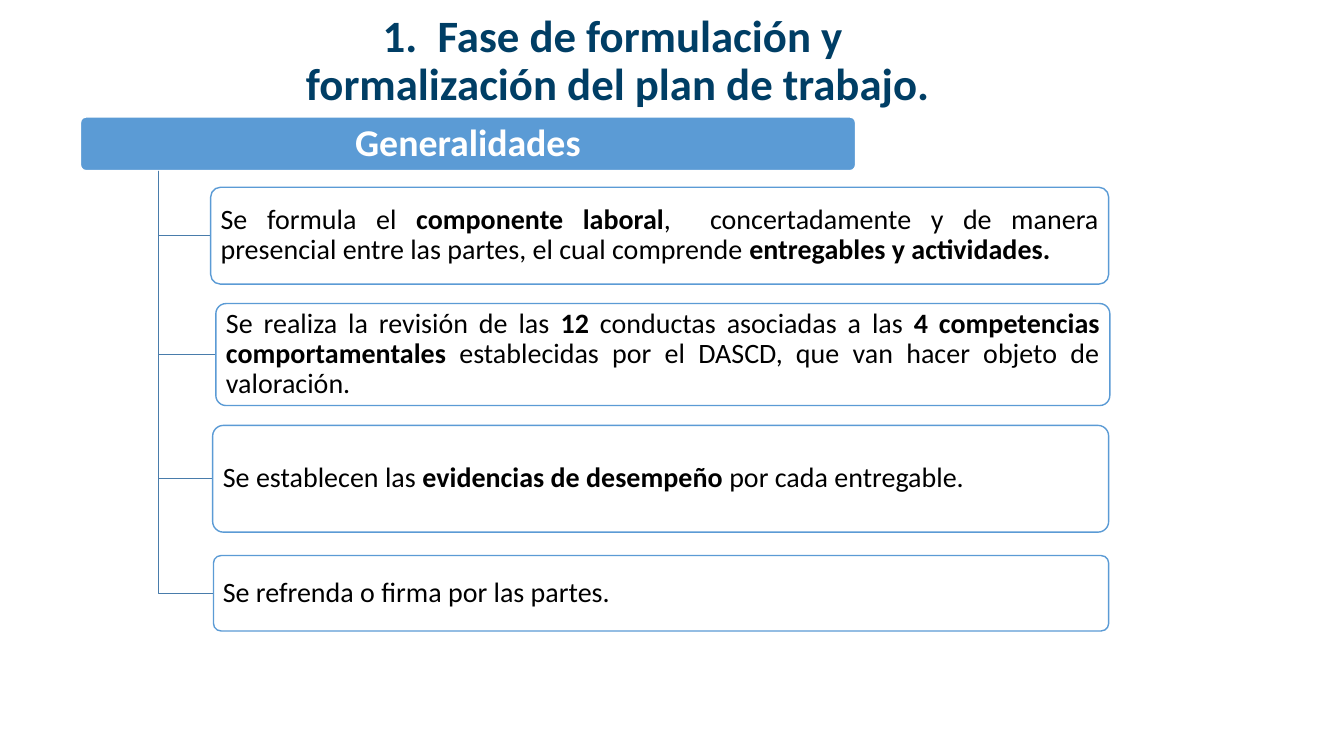
"""Build the slide on the formulation phase of the work plan."""
from dataclasses import dataclass

from lxml import etree
from pptx import Presentation
from pptx.dml.color import RGBColor
from pptx.enum.shapes import MSO_SHAPE
from pptx.enum.text import MSO_ANCHOR, PP_ALIGN
from pptx.oxml.ns import qn
from pptx.util import Cm, Pt

ROUNDED = MSO_SHAPE.ROUNDED_RECTANGLE
MIDDLE = MSO_ANCHOR.MIDDLE
CENTER, JUSTIFY, LEFT = PP_ALIGN.CENTER, PP_ALIGN.JUSTIFY, PP_ALIGN.LEFT


@dataclass(frozen=True)
class Theme:
    font: str = "Calibri"
    navy: RGBColor = RGBColor(0x00, 0x3E, 0x65)
    blue: RGBColor = RGBColor(0x5B, 0x9B, 0xD5)
    branch: RGBColor = RGBColor(0x49, 0x7C, 0xAB)
    white: RGBColor = RGBColor(0xFF, 0xFF, 0xFF)
    black: RGBColor = RGBColor(0x00, 0x00, 0x00)
    title_size: Pt = Pt(32)
    header_size: Pt = Pt(27)
    body_size: Pt = Pt(20)
    line_width: Pt = Pt(1)


THEME = Theme()


def add_run(paragraph, text, size, color, bold):
    run = paragraph.add_run()
    run.text = text
    run.font.name = THEME.font
    run.font.size = size
    run.font.bold = bold
    run.font.color.rgb = color


def add_rounded_box(left, top, width, height, fill, line, alignment):
    shape = slide.shapes.add_shape(ROUNDED, Cm(left), Cm(top), Cm(width), Cm(height))
    shape.shadow.inherit = False
    shape.adjustments[0] = 0.1
    shape.fill.solid()
    shape.fill.fore_color.rgb = fill
    shape.line.color.rgb = line
    shape.line.width = THEME.line_width
    frame = shape.text_frame
    frame.word_wrap = True
    frame.vertical_anchor = MIDDLE
    frame.margin_left = frame.margin_right = Cm(0.18)
    frame.margin_top = frame.margin_bottom = Cm(0.14)
    paragraph = frame.paragraphs[0]
    paragraph.alignment = alignment
    paragraph.line_spacing = 0.9
    return shape, paragraph


presentation = Presentation()
presentation.slide_width = Cm(33.87)
presentation.slide_height = Cm(19.05)
slide = presentation.slides.add_slide(presentation.slide_layouts[6])

title = slide.shapes.add_textbox(Cm(0.97), Cm(0.2), Cm(29.21), Cm(2.74))
title.text_frame.word_wrap = True
title.text_frame.vertical_anchor = MIDDLE
title_paragraph = title.text_frame.paragraphs[0]
title_paragraph.alignment = CENTER
title_paragraph.line_spacing = 0.9
add_run(title_paragraph, "1.  Fase de formulación y ", THEME.title_size, THEME.navy, True)
title_paragraph.add_line_break()
add_run(title_paragraph, "formalización del plan de trabajo.", THEME.title_size, THEME.navy, True)

header, header_paragraph = add_rounded_box(2.03, 2.95, 19.53, 1.35, THEME.blue, THEME.white, CENTER)
add_run(header_paragraph, "Generalidades", THEME.header_size, THEME.white, True)

TRUNK_LEFT, TRUNK_TOP = 3.99, 4.3
steps = [
    (5.31, 4.72, 22.63, 2.44, JUSTIFY, [
        ("Se formula el ", False),
        ("componente laboral", True),
        (",  concertadamente y de manera presencial entre las partes, el cual comprende ", False),
        ("entregables y actividades.", True),
    ]),
    (5.44, 7.65, 22.53, 2.57, JUSTIFY, [
        ("Se realiza la revisión de las ", False),
        ("12", True),
        (" conductas asociadas a las ", False),
        ("4 competencias comportamentales", True),
        (" establecidas por el DASCD, que van hacer objeto de valoración.", False),
    ]),
    (5.36, 10.72, 22.58, 2.69, JUSTIFY, [
        ("Se establecen las ", False),
        ("evidencias de desempeño", True),
        (" por cada entregable.", False),
    ]),
    (5.38, 14, 22.56, 1.9, LEFT, [("Se refrenda o firma por las partes.", False)]),
]

for left, top, width, height, alignment, runs in steps:
    middle = top + height / 2
    builder = slide.shapes.build_freeform(Cm(TRUNK_LEFT), Cm(TRUNK_TOP))
    builder.add_line_segments(
        [(Cm(TRUNK_LEFT), Cm(middle)), (Cm(left), Cm(middle))], close=False
    )
    branch = builder.convert_to_shape()
    branch.shadow.inherit = False
    branch.fill.background()
    branch.line.color.rgb = THEME.branch
    branch.line.width = THEME.line_width

    box, paragraph = add_rounded_box(left, top, width, height, THEME.white, THEME.blue, alignment)
    fill_color = box.fill._xPr.find(qn("a:solidFill"))[0]
    etree.SubElement(fill_color, qn("a:alpha")).set("val", "90000")
    for text, bold in runs:
        add_run(paragraph, text, THEME.body_size, THEME.black, bold)

presentation.save("out.pptx")
